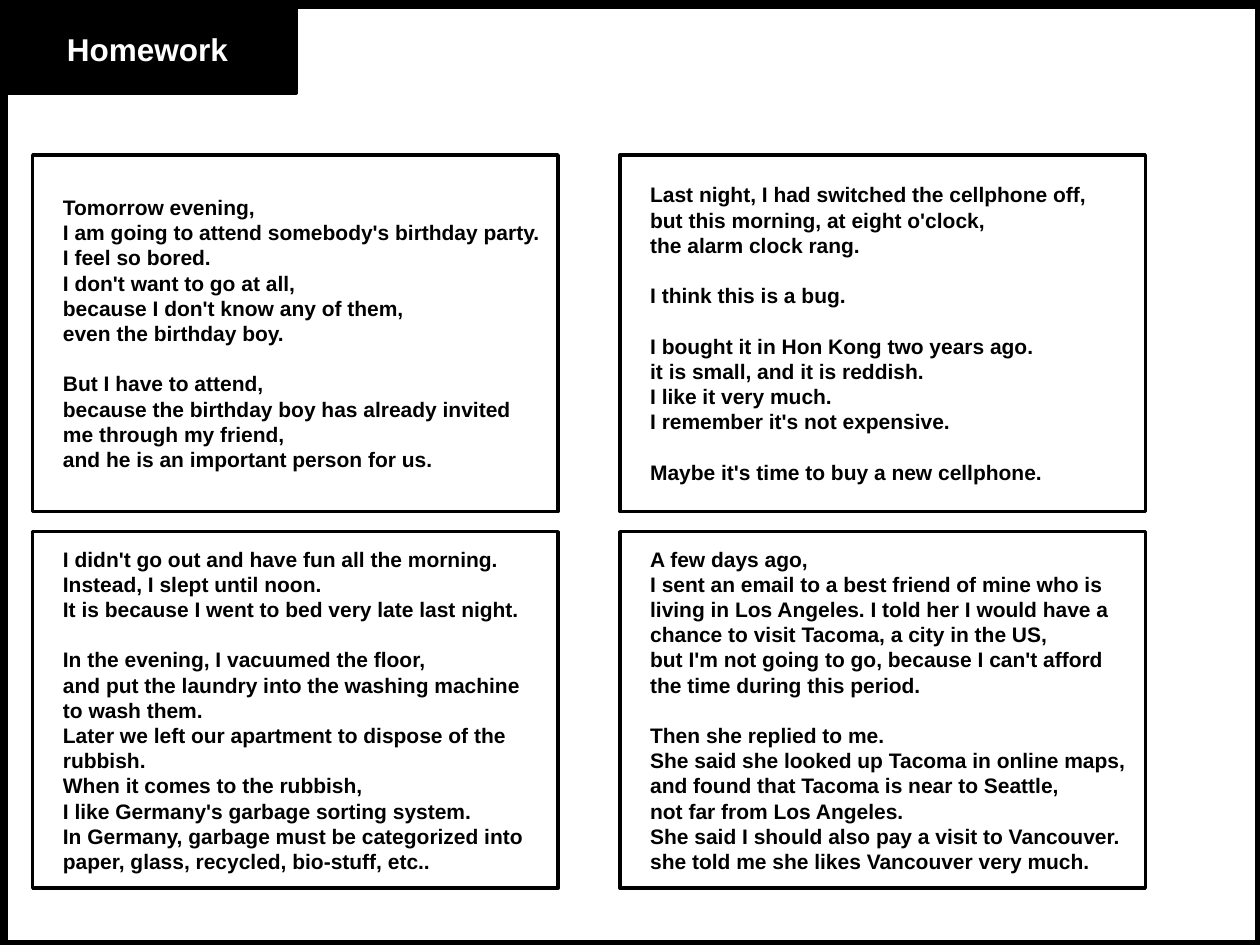
"""Build the Homework slide: a title tab and four short stories in a grid."""
import pptx
import pptx.dml.color
import pptx.enum.shapes
import pptx.enum.text
import pptx.util

Inches = pptx.util.Inches
Pt = pptx.util.Pt
PP_ALIGN = pptx.enum.text.PP_ALIGN
BLACK = pptx.dml.color.RGBColor(0x00, 0x00, 0x00)
WHITE = pptx.dml.color.RGBColor(0xFF, 0xFF, 0xFF)

STORIES = [
    [
        [
            "Tomorrow evening,",
            "I am going to attend somebody's birthday party.",
            "I feel so bored.",
            "I don't want to go at all,",
            "because I don't know any of them,",
            "even the birthday boy.",
        ],
        [
            "But I have to attend,",
            "because the birthday boy has already invited me through my friend,",
            "and he is an important person for us.",
        ],
    ],
    [
        [
            "Last night, I had switched the cellphone off,",
            "but this morning, at eight o'clock,",
            "the alarm clock rang.",
        ],
        ["I think this is a bug."],
        [
            "I bought it in Hon Kong two years ago.",
            "it is small, and it is reddish.",
            "I like it very much.",
            "I remember it's not expensive.",
        ],
        ["Maybe it's time to buy a new cellphone."],
    ],
    [
        [
            "I didn't go out and have fun all the morning.",
            "Instead, I slept until noon.",
            "It is because I went to bed very late last night.",
        ],
        [
            "In the evening, I vacuumed the floor,",
            "and put the laundry into the washing machine to wash them.",
            "Later we left our apartment to dispose of the rubbish.",
            "When it comes to the rubbish,",
            "I like Germany's garbage sorting system.",
            "In Germany, garbage must be categorized into paper, glass, recycled, bio-stuff, etc..",
        ],
    ],
    [
        [
            "A few days ago,",
            "I sent an email to a best friend of mine who is living in Los Angeles. "
            "I told her I would have a chance to visit Tacoma, a city in the US,",
            "but I'm not going to go, because I can't afford the time during this period.",
        ],
        [
            "Then she replied to me.",
            "She said she looked up Tacoma in online maps,",
            "and found that Tacoma is near to Seattle,",
            "not far from Los Angeles.",
            "She said I should also pay a visit to Vancouver.",
            "she told me she likes Vancouver very much.",
        ],
    ],
]


def add_box(left, top, width, height, line_width, fill=None):
    box = slide.shapes.add_shape(
        pptx.enum.shapes.MSO_SHAPE.RECTANGLE,
        Inches(left), Inches(top), Inches(width), Inches(height),
    )
    box.shadow.inherit = False
    if fill is None:
        box.fill.background()
    else:
        box.fill.solid()
        box.fill.fore_color.rgb = fill
    box.line.color.rgb = BLACK
    box.line.width = Pt(line_width)
    box.text_frame.word_wrap = True
    box.text_frame.vertical_anchor = pptx.enum.text.MSO_ANCHOR.MIDDLE
    return box


def add_text(paragraph, text, size, color, alignment):
    paragraph.alignment = alignment
    run = paragraph.add_run()
    run.text = text
    run.font.name = "Arial"
    run.font.size = Pt(size)
    run.font.bold = True
    run.font.color.rgb = color


presentation = pptx.Presentation()
presentation.slide_width = Inches(10)
presentation.slide_height = Inches(7.5)
slide = presentation.slides.add_slide(presentation.slide_layouts[6])

add_box(0.02, 0.03, 9.98, 7.47, 6)
title_tab = add_box(-0.01, 0.03, 2.36, 0.71, 2, BLACK)
add_text(title_tab.text_frame.paragraphs[0], "Homework", 18, WHITE, PP_ALIGN.CENTER)

for index, stanzas in enumerate(STORIES):
    row, column = divmod(index, 2)
    story = add_box(0.26 + column * 4.66, 1.23 + row * 2.99, 4.17, 2.83, 2, WHITE).text_frame
    story.margin_left = Inches(0.24)
    story.margin_right = Inches(0.1)
    story.margin_top = story.margin_bottom = Inches(0.05)
    paragraph = story.paragraphs[0]
    for stanza_number, stanza in enumerate(stanzas):
        for line_number, sentence in enumerate(stanza):
            if stanza_number or line_number:
                paragraph = story.add_paragraph()
            if stanza_number and not line_number:
                paragraph.space_before = Pt(14.4)
            add_text(paragraph, sentence, 12, BLACK, PP_ALIGN.LEFT)

presentation.save("out.pptx")
